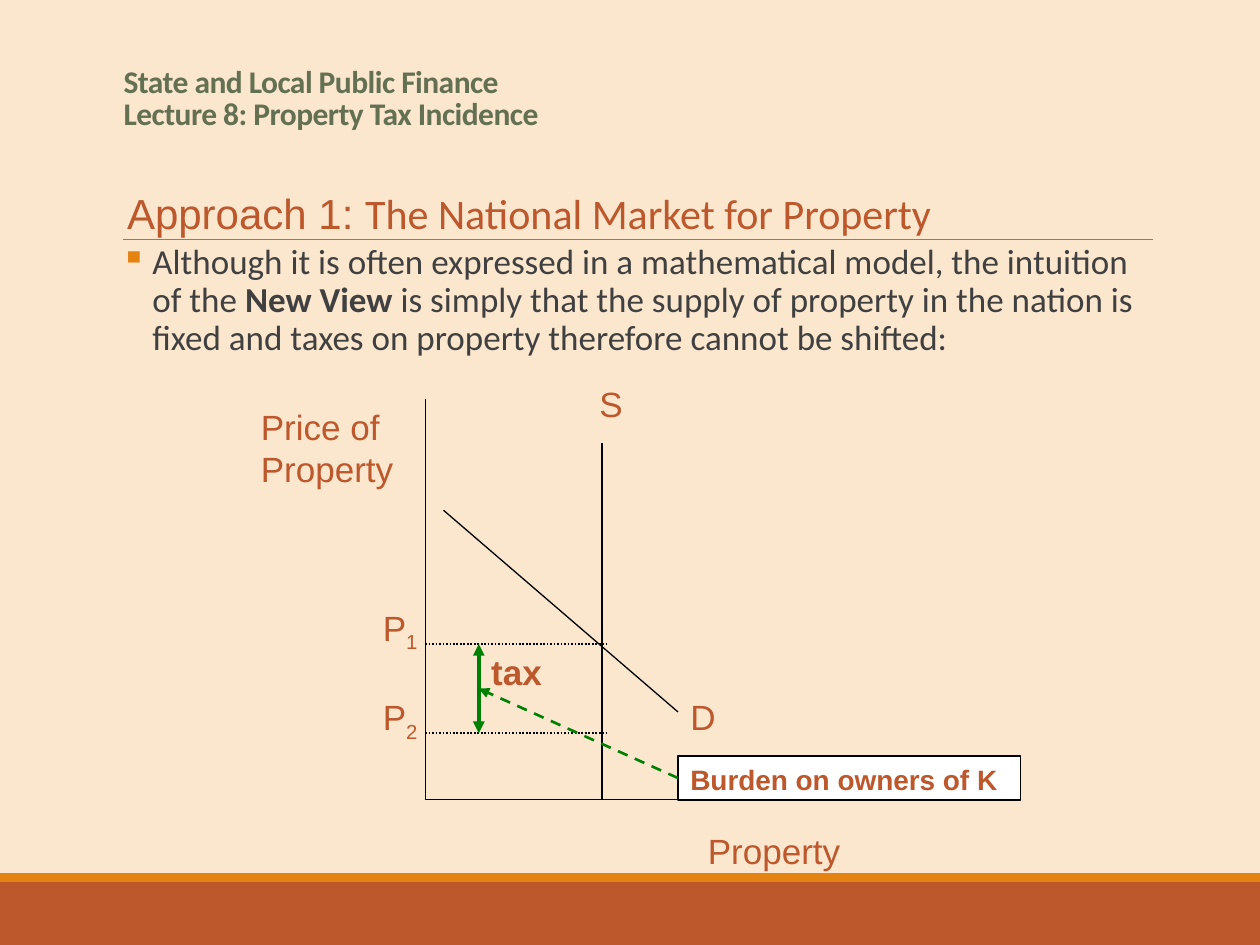
from dataclasses import dataclass

from lxml import etree
from pptx import Presentation
from pptx.dml.color import RGBColor
from pptx.enum.dml import MSO_LINE
from pptx.enum.shapes import MSO_CONNECTOR, MSO_SHAPE
from pptx.enum.text import MSO_ANCHOR, MSO_AUTO_SIZE, PP_ALIGN
from pptx.oxml.ns import qn
from pptx.util import Pt

STRAIGHT = MSO_CONNECTOR.STRAIGHT
RECTANGLE = MSO_SHAPE.RECTANGLE
DOTTED = MSO_LINE.ROUND_DOT
DASHED = MSO_LINE.DASH
LEFT_SIDE = 1
TITLE_ONLY = 5


@dataclass(frozen=True)
class Theme:
    background: str = "FBE6CE"
    rust: str = "BD582C"
    orange: str = "E48312"
    olive: str = "637052"
    body: str = "404040"
    rule: str = "808080"
    black: str = "000000"
    white: str = "FFFFFF"
    green: str = "008000"
    text_font: str = "Calibri"
    label_font: str = "Arial"
    title_size: int = 18
    heading_size: int = 24
    body_size: int = 20
    note_size: int = 16


THEME = Theme()
LABEL = {"name": THEME.label_font, "size": Pt(THEME.body_size), "color": THEME.rust}


def format_font(font, values):
    for name, value in values.items():
        if name == "color":
            font.color.rgb = RGBColor.from_string(value)
        else:
            setattr(font, name, value)


def format_paragraph(paragraph, values):
    for name, value in values.items():
        setattr(paragraph, name, value)


def write_runs(paragraph, runs, base):
    for text, changes in runs:
        run = paragraph.add_run()
        run.text = text
        format_font(run.font, {**base, **changes})


def add_text(slide, box, runs, base):
    shape = slide.shapes.add_textbox(*map(Pt, box))
    shape.text_frame.word_wrap = True
    write_runs(shape.text_frame.paragraphs[0], runs, base)
    return shape


def add_rectangle(slide, box, fill, line=None):
    shape = slide.shapes.add_shape(RECTANGLE, *map(Pt, box))
    shape.shadow.inherit = False
    shape.fill.solid()
    shape.fill.fore_color.rgb = RGBColor.from_string(fill)
    if line:
        shape.line.color.rgb = RGBColor.from_string(line)
        shape.line.width = Pt(0.75)
    else:
        shape.line.fill.background()
    return shape


def add_line(slide, start, end, color=THEME.black, width=0.75, dash=None, arrows=()):
    connector = slide.shapes.add_connector(STRAIGHT, *map(Pt, (*start, *end)))
    connector.line.color.rgb = RGBColor.from_string(color)
    connector.line.width = Pt(width)
    if dash:
        connector.line.dash_style = dash
    outline = connector.line._get_or_add_ln()
    for arrow in arrows:
        etree.SubElement(outline, qn(f"a:{arrow}"), type="triangle")
    etree.SubElement(connector._element.spPr, qn("a:effectLst"))
    return connector


def add_backdrop(slide, width, height):
    slide.background.fill.solid()
    slide.background.fill.fore_color.rgb = RGBColor.from_string(THEME.background)
    add_rectangle(slide, (0, height - 36, width, 36), THEME.rust)
    add_rectangle(slide, (0, height - 41, width, 5), THEME.orange)
    add_line(slide, (70.5, 136.8), (658.8, 136.8), THEME.rule, 0.5)


def add_title(slide, box):
    title = slide.shapes.title
    for name, value in zip(("left", "top", "width", "height"), box):
        setattr(title, name, Pt(value))
    frame = title.text_frame
    frame.auto_size = MSO_AUTO_SIZE.NONE
    frame.vertical_anchor = MSO_ANCHOR.BOTTOM
    paragraph = frame.paragraphs[0]
    paragraph.text = "State and Local Public Finance\vLecture 8: Property Tax Incidence"
    format_paragraph(paragraph, {"alignment": PP_ALIGN.LEFT, "line_spacing": 0.85})
    for run in paragraph.runs:
        format_font(run.font, {"name": THEME.text_font, "size": Pt(THEME.title_size),
                               "color": THEME.olive, "bold": True})
        run.font._element.set("spc", "-30")


def add_heading(slide, box):
    add_text(slide, box,
             [("Approach 1: ", {}),
              ("The National Market for Property", {"name": THEME.text_font})],
             {**LABEL, "size": Pt(THEME.heading_size)})


def add_body(slide, box):
    shape = add_text(slide, box, [
        ("Although it is often expressed in a mathematical model, the intuition of the ", {}),
        ("New View ", {"bold": True}),
        ("is simply that the supply of property in the nation is fixed and taxes on "
         "property therefore cannot be shifted:", {}),
    ], {"name": THEME.text_font, "size": Pt(THEME.body_size), "color": THEME.body})
    shape.text_frame.margin_left = shape.text_frame.margin_right = 0
    paragraph = shape.text_frame.paragraphs[0]
    format_paragraph(paragraph, {"line_spacing": 0.9, "space_before": Pt(6.8),
                                 "space_after": Pt(1.1)})
    properties = paragraph._p.get_or_add_pPr()
    properties.set("marL", str(Pt(18)))
    properties.set("indent", str(Pt(-18)))
    bullet_color = etree.SubElement(properties, qn("a:buClr"))
    etree.SubElement(bullet_color, qn("a:srgbClr"), val=THEME.orange)
    etree.SubElement(properties, qn("a:buChar"), char="▪")


def add_market_diagram(slide, left, top):
    def at(x, y):
        return left + x, top + y

    axis, base, supply, tax = 101, 242, 202, 131.6
    price_before, price_after = 153, 204
    demand_end = 245.4

    for start, end in (((axis, 13.2), (axis, base)),
                       ((axis, base), (276.3, base)),
                       ((111.5, 76.6), (demand_end, 191.8)),
                       ((supply, base), (supply, 38.4))):
        add_line(slide, at(*start), at(*end))
    for price in (price_before, price_after):
        add_line(slide, at(axis, price), at(supply + 2.3, price), width=1, dash=DOTTED)
    add_line(slide, at(tax, price_before), at(tax, price_after), THEME.green, 2.25,
             arrows=("headEnd", "tailEnd"))

    for x, y, width, height, text in ((0, 13.2, 91.4, 51, "Price of Property"),
                                      (255.4, 255.2, 154, 51, "Property"),
                                      (demand_end, 178.8, 52, 38, "D"),
                                      (193.5, 0.3, 83, 38, "S")):
        add_text(slide, (*at(x, y), width, height), [(text, {})], LABEL)
    for price, number in ((price_before, "1"), (price_after, "2")):
        shape = add_text(slide, (*at(69.7, price - 25.2), 41, 38),
                         [("P", {}), (number, {})], LABEL)
        subscript = shape.text_frame.paragraphs[0].runs[1]
        subscript.font._element.set("baseline", "-25000")

    burden = add_rectangle(slide, (*at(demand_end, 217), 195.8, 25.2),
                           THEME.white, THEME.black)
    burden.text_frame.vertical_anchor = MSO_ANCHOR.TOP
    paragraph = burden.text_frame.paragraphs[0]
    paragraph.alignment = PP_ALIGN.LEFT
    write_runs(paragraph, [("Burden on owners of K", {})],
               {**LABEL, "size": Pt(THEME.note_size), "bold": True})
    pointer = add_line(slide, at(demand_end, 229.6),
                       at(tax, (price_before + price_after) / 2),
                       THEME.green, 1.5, DASHED, ("tailEnd",))
    pointer.begin_connect(burden, LEFT_SIDE)
    add_text(slide, (*at(tax, price_before), 50, 51), [("tax", {"bold": True})], LABEL)


def main():
    presentation = Presentation()
    presentation.slide_width, presentation.slide_height = Pt(720), Pt(540)
    slide = presentation.slides.add_slide(presentation.slide_layouts[TITLE_ONLY])
    add_backdrop(slide, 720, 540)
    add_title(slide, (63.4, 23.8, 594, 55.4))
    add_heading(slide, (65.5, 103.7, 478.8, 36))
    add_body(slide, (69.1, 136.1, 591.1, 78.5))
    add_market_diagram(slide, 142, 215)
    presentation.save("out.pptx")


if __name__ == "__main__":
    main()
